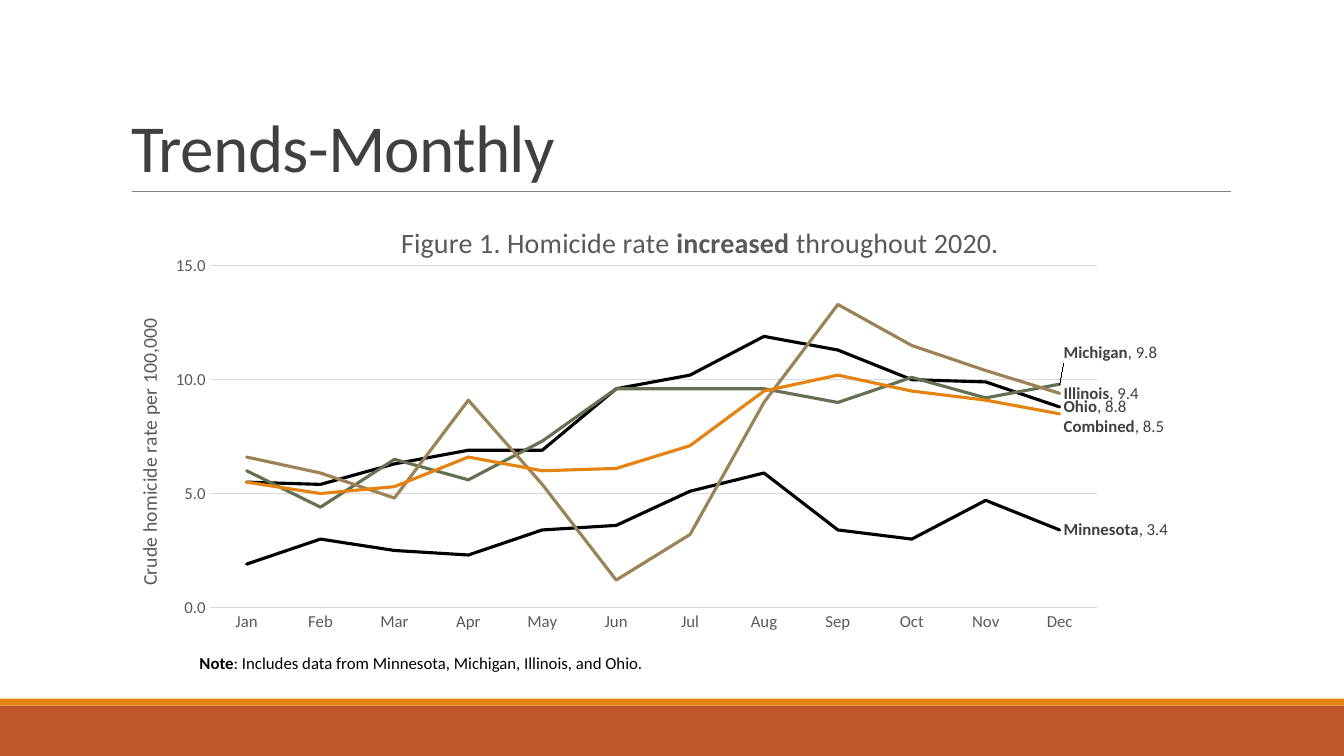
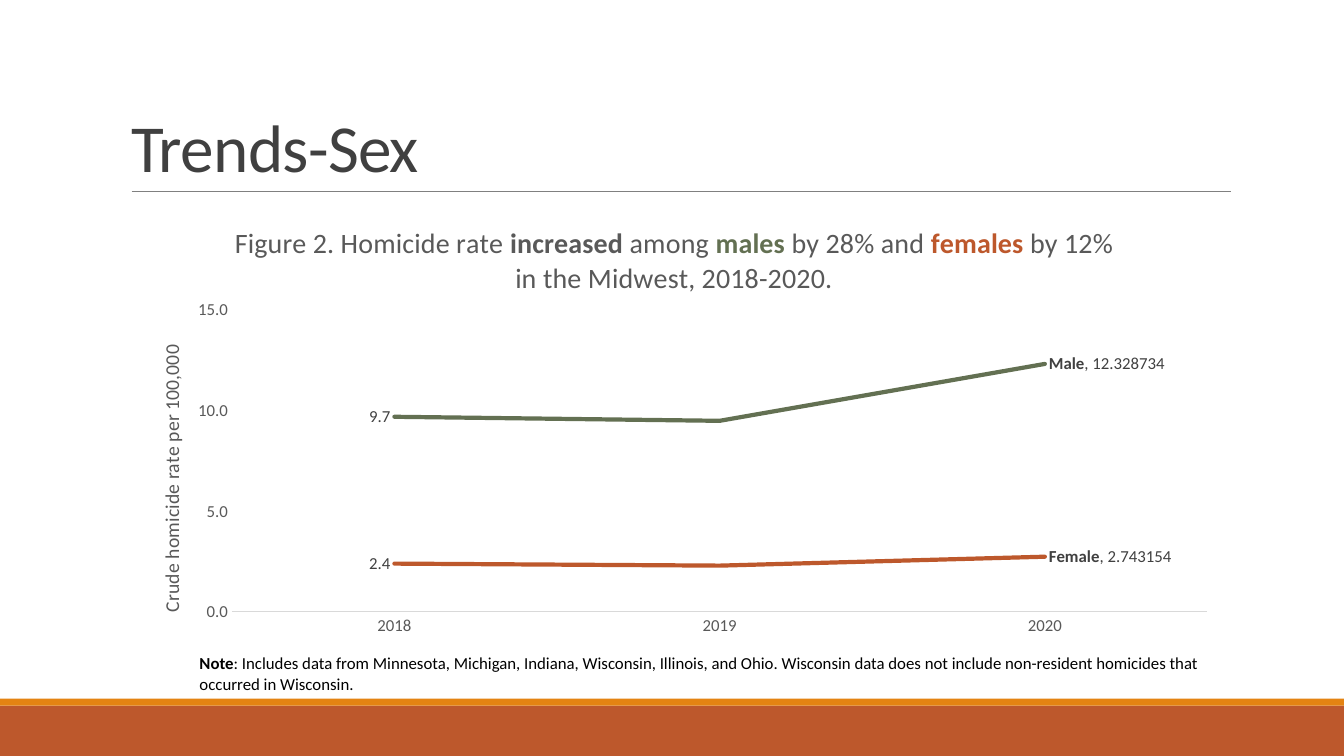
import pptx
import pptx.chart.data
import pptx.dml.color
import pptx.enum.chart
import pptx.enum.shapes
import pptx.enum.text
import pptx.oxml
import pptx.oxml.ns
import pptx.util

Pt = pptx.util.Pt
rgb = pptx.dml.color.RGBColor.from_string
label_at = pptx.enum.chart.XL_LABEL_POSITION
no_tick = pptx.enum.chart.XL_TICK_MARK.NONE

FONT = "Calibri"
COLORS = {
    "rust": "BD582C", "orange": "E48312", "green": "637052", "tan": "9B8357",
    "black": "000000", "heading": "404040", "axis": "595959",
    "grid": "D9D9D9", "rule": "808080",
}


def write(paragraph, pieces, size, color):
    """Fill a paragraph with (text, bold, colour name or None) pieces."""
    paragraph.font.name = FONT
    paragraph.font.size = Pt(size)
    paragraph.font.bold = False
    paragraph.font.color.rgb = rgb(COLORS[color])
    for text, bold, accent in pieces:
        run = paragraph.add_run()
        run.text = text
        run.font.bold = bold
        if accent:
            run.font.color.rgb = rgb(COLORS[accent])


def place(parent, index, x, y, w=None, h=None):
    """Insert a manual layout, in fractions of the chart, into a chart part."""
    for old in parent.findall(pptx.oxml.ns.qn("c:layout")):
        parent.remove(old)
    fields = [("x", x), ("y", y)]
    if w:
        fields = [("layoutTarget", "inner"), ("xMode", "edge"), ("yMode", "edge")] + fields + [("w", w), ("h", h)]
    elif parent.tag == pptx.oxml.ns.qn("c:title"):
        fields = [("xMode", "edge"), ("yMode", "edge")] + fields
    body = "".join(f'<c:{name} val="{value}"/>' for name, value in fields)
    parent.insert(index, pptx.oxml.parse_xml(
        f'<c:layout {pptx.oxml.ns.nsdecls("c")}><c:manualLayout>{body}</c:manualLayout></c:layout>'))


# Content: each series is name, colour, last label, vertical label shift, values
trends = [
    {
        "title": "Trends-Monthly",
        "caption": [("Figure 1. Homicide rate ", False, None), ("increased", True, None),
                    (" throughout 2020.", False, None)],
        "caption_at": (0.25, 0.04),
        "axis_title_at": (0.01, 0.25),
        "plot": (0.08, 0.14, 0.8, 0.77),
        "grid": True,
        "weight": 2.25,
        "label_first": False,
        "periods": ["Jan", "Feb", "Mar", "Apr", "May", "Jun",
                    "Jul", "Aug", "Sep", "Oct", "Nov", "Dec"],
        "series": [
            ("Ohio", "black", "8.8", 0, [5.5, 5.4, 6.3, 6.9, 6.9, 9.6, 10.2, 11.9, 11.3, 10, 9.9, 8.8]),
            ("Minnesota", "black", "3.4", 0, [1.9, 3, 2.5, 2.3, 3.4, 3.6, 5.1, 5.9, 3.4, 3, 4.7, 3.4]),
            ("Michigan", "green", "9.8", -0.07, [6, 4.4, 6.5, 5.6, 7.3, 9.6, 9.6, 9.6, 9, 10.1, 9.2, 9.8]),
            ("Illinois", "tan", "9.4", 0, [6.6, 5.9, 4.8, 9.1, 5.4, 1.2, 3.2, 9, 13.3, 11.5, 10.4, 9.4]),
            ("Combined", "orange", "8.5", 0.03, [5.5, 5, 5.3, 6.6, 6, 6.1, 7.1, 9.5, 10.2, 9.5, 9.1, 8.5]),
        ],
        "note": ": Includes data from Minnesota, Michigan, Illinois, and Ohio.",
    },
    {
        "title": "Trends-Sex",
        "caption": [("Figure 2. Homicide rate ", False, None), ("increased", True, None),
                    (" among ", False, None), ("males", True, "green"),
                    (" by 28% and ", False, None), ("females", True, "rust"),
                    (" by 12% in the Midwest, 2018-2020.", False, None)],
        "caption_at": (0.1, 0.04),
        "axis_title_at": (0.03, 0.31),
        "plot": (0.1, 0.24, 0.88, 0.68),
        "grid": False,
        "weight": 3,
        "label_first": True,
        "periods": ["2018", "2019", "2020"],
        "series": [
            ("Male", "green", "12.328734", 0, [9.7, 9.5, 12.328734]),
            ("Female", "rust", "2.743154", 0, [2.4, 2.3, 2.743154]),
        ],
        "note": ": Includes data from Minnesota, Michigan, Indiana, Wisconsin, Illinois, and Ohio. "
                "Wisconsin data does not include non-resident homicides that occurred in Wisconsin.",
    },
]

deck = pptx.Presentation()
deck.slide_width, deck.slide_height = Pt(960), Pt(540)

for trend in trends:
    slide = deck.slides.add_slide(deck.slide_layouts[5])

    # Footer bands
    for top, height, color in [(504, 36, "rust"), (499, 5, "orange")]:
        band = slide.shapes.add_shape(pptx.enum.shapes.MSO_SHAPE.RECTANGLE, 0, Pt(top), Pt(960), Pt(height))
        band.shadow.inherit = False
        band.fill.solid()
        band.fill.fore_color.rgb = rgb(COLORS[color])
        band.line.fill.background()

    # Title and the rule below it
    rule = slide.shapes.add_connector(
        pptx.enum.shapes.MSO_CONNECTOR.STRAIGHT, Pt(94), Pt(136.5), Pt(879), Pt(136.5))
    rule.line.color.rgb = rgb(COLORS["rule"])
    rule.line.width = Pt(0.5)
    rule.element.spPr.append(pptx.oxml.parse_xml(f'<a:effectLst {pptx.oxml.ns.nsdecls("a")}/>'))

    heading = slide.shapes.title
    heading.left, heading.top, heading.width, heading.height = Pt(86.4), Pt(22.4), Pt(792), Pt(114.5)
    heading.text_frame.vertical_anchor = pptx.enum.text.MSO_ANCHOR.BOTTOM
    heading.text_frame.auto_size = pptx.enum.text.MSO_AUTO_SIZE.NONE
    heading_line = heading.text_frame.paragraphs[0]
    heading_line.alignment = pptx.enum.text.PP_ALIGN.LEFT
    heading_line.line_spacing = 0.85
    write(heading_line, [(trend["title"], False, None)], 48, "heading")
    for properties in heading.element.xpath(".//a:rPr"):
        properties.set("spc", "-50")

    # Line chart
    rates = pptx.chart.data.CategoryChartData(number_format="0.0")
    rates.categories = trend["periods"]
    for name, color, last_label, shift, values in trend["series"]:
        rates.add_series(name, values)
    chart = slide.shapes.add_chart(
        pptx.enum.chart.XL_CHART_TYPE.LINE, Pt(86.4), Pt(145.5), Pt(792), Pt(317), rates).chart
    chart.has_legend = False
    chart.font.name = FONT
    chart.font.size = Pt(12)
    chart.font.color.rgb = rgb(COLORS["heading"])
    chart.plots[0].vary_by_categories = False
    place(chart.element.xpath(".//c:plotArea")[0], 0, *trend["plot"])

    chart.has_title = True
    write(chart.chart_title.text_frame.paragraphs[0], trend["caption"], 20, "axis")
    place(chart.element.xpath("./c:chart/c:title")[0], 1, *trend["caption_at"])

    # Axes
    for axis in (chart.category_axis, chart.value_axis):
        axis.major_tick_mark = axis.minor_tick_mark = no_tick
        axis.tick_labels.font.size = Pt(12)
        axis.tick_labels.font.name = FONT
        axis.tick_labels.font.color.rgb = rgb(COLORS["axis"])
    chart.category_axis.format.line.color.rgb = rgb(COLORS["grid"])
    chart.category_axis.format.line.width = Pt(0.75)
    rate_axis = chart.value_axis
    rate_axis.minimum_scale, rate_axis.maximum_scale, rate_axis.major_unit = 0, 15, 5
    rate_axis.format.line.fill.background()
    rate_axis.tick_labels.number_format = "0.0"
    rate_axis.tick_labels.number_format_is_linked = False
    rate_axis.has_major_gridlines = trend["grid"]
    if trend["grid"]:
        rate_axis.major_gridlines.format.line.color.rgb = rgb(COLORS["grid"])
        rate_axis.major_gridlines.format.line.width = Pt(0.75)
    write(rate_axis.axis_title.text_frame.paragraphs[0],
          [("Crude homicide rate per 100,000", False, None)], 14, "axis")
    place(chart.element.xpath(".//c:valAx/c:title")[0], 1, *trend["axis_title_at"])

    # Series lines and their end labels
    for series, (name, color, last_label, shift, values) in zip(chart.plots[0].series, trend["series"]):
        series.smooth = False
        series.format.line.color.rgb = rgb(COLORS[color])
        series.format.line.width = Pt(trend["weight"])
        series.marker.style = pptx.enum.chart.XL_MARKER_STYLE.NONE
        series.data_labels.show_value = False
        if trend["label_first"]:
            first = series.points[0].data_label
            first.font.size = Pt(12)
            first.font.color.rgb = rgb(COLORS["heading"])
            first.position = label_at.LEFT
        last = series.points[len(values) - 1].data_label
        write(last.text_frame.paragraphs[0],
              [(name, True, None), (f", {last_label}", False, None)], 12, "heading")
        last.position = label_at.RIGHT
        if shift:
            place(series.points[len(values) - 1].data_label.text_frame._txBody.getparent().getparent(), 1, 0, shift)
    for line in chart.element.xpath(".//c:ser/c:spPr/a:ln"):
        line.set("cap", "rnd")

    # Note
    note = slide.shapes.add_textbox(Pt(135.4), Pt(463), Pt(738), Pt(36)).text_frame
    note.word_wrap = True
    write(note.paragraphs[0], [("Note", True, None), (trend["note"], False, None)], 12, "black")

deck.save("out.pptx")
